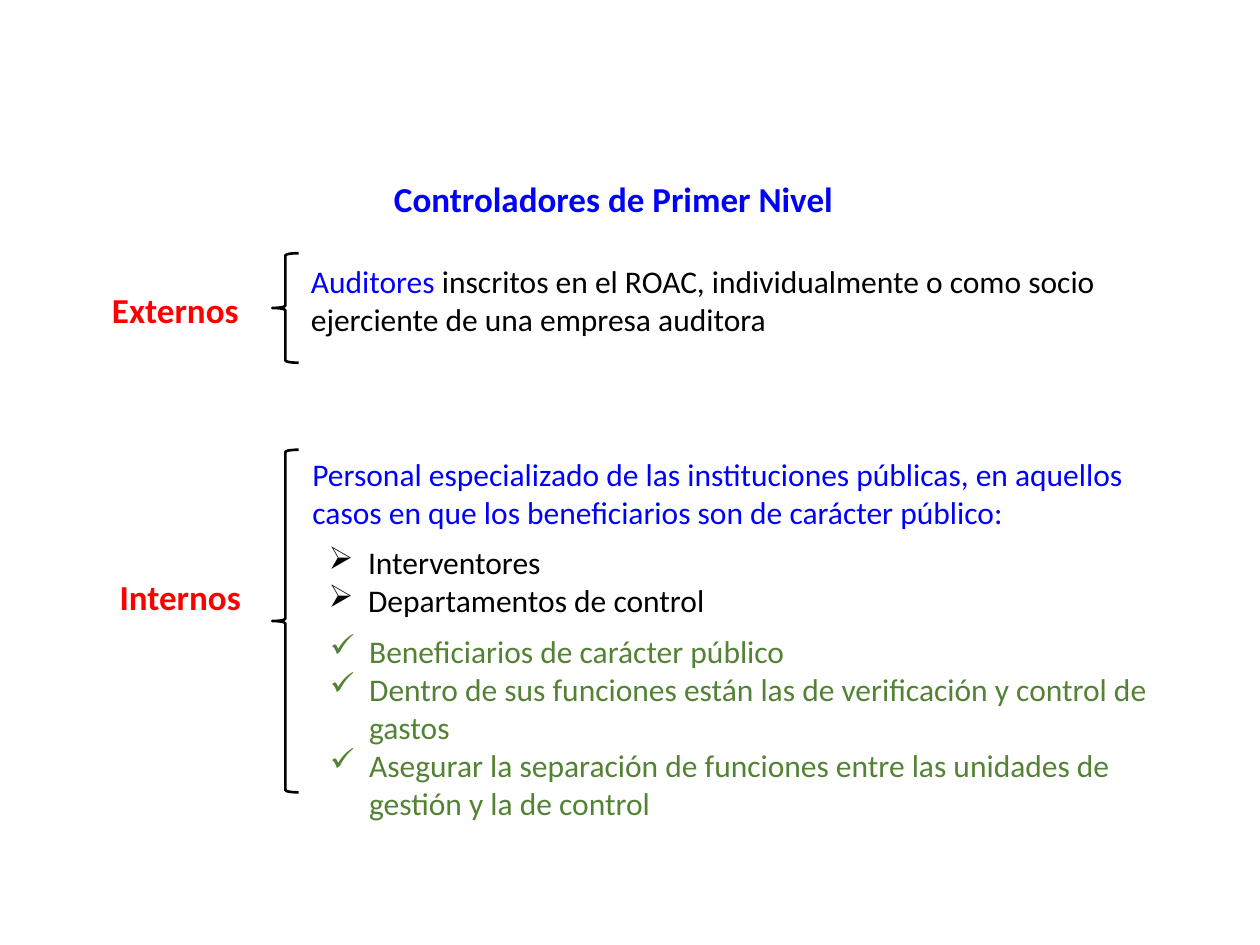
"""Build the slide on first-level controllers."""
from dataclasses import dataclass
from typing import Optional

from lxml import etree
from pptx import Presentation
from pptx.dml.color import RGBColor
from pptx.enum import shapes, text
from pptx.oxml.ns import qn
from pptx.util import Pt

HUES = {"blue": "0000FF", "black": "000000", "red": "FF0000", "green": "548235"}
BODY = {"name": "Calibri", "size": Pt(18), "bold": False}
HEAD = {"name": "Calibri", "size": Pt(20), "bold": True}
HANG = Pt(22.5)
Box = tuple[float, float, float, float]
Run = tuple[str, str]


@dataclass
class Block:
    """Text paragraphs, each a list of (words, hue) runs."""
    box: Box
    paras: list[list[Run]]
    style: dict
    mark: Optional[str] = None


def paint(hue: str) -> RGBColor:
    """Give the colour of a named hue."""
    return RGBColor.from_string(HUES[hue])


def place(shape, box: Box) -> None:
    """Set position and size in points."""
    for name, size in zip(("left", "top", "width", "height"), box):
        setattr(shape, name, Pt(size))


def fill(shape, block: Block, align=text.PP_ALIGN.LEFT) -> None:
    """Write a block's paragraphs into a shape."""
    frame = shape.text_frame
    look = {"word_wrap": True, "vertical_anchor": text.MSO_ANCHOR.TOP,
            "auto_size": text.MSO_AUTO_SIZE.SHAPE_TO_FIT_TEXT}
    for name, value in look.items():
        setattr(frame, name, value)
    for num, runs in enumerate(block.paras):
        para = frame.add_paragraph() if num else frame.paragraphs[0]
        para.alignment = align
        if block.mark:
            props = para._p.get_or_add_pPr()
            props.set("marL", str(HANG))
            props.set("indent", str(-HANG))
            etree.SubElement(props, qn("a:buChar")).set("char", block.mark)
        for words, hue in runs:
            run = para.add_run()
            run.text = words
            for name, value in block.style.items():
                setattr(run.font, name, value)
            run.font.color.rgb = paint(hue)


def write(slide, block: Block) -> None:
    """Add a text box for a block."""
    fill(slide.shapes.add_textbox(*map(Pt, block.box)), block)


def brace(slide, box: Box) -> None:
    """Add an open left brace."""
    shape = slide.shapes.add_shape(shapes.MSO_SHAPE.LEFT_BRACE, *map(Pt, box))
    shape.shadow.inherit = False
    shape.fill.background()
    shape.line.color.rgb = paint("black")
    shape.line.width = Pt(1.5)


def main() -> None:
    """Make and save the deck."""
    deck = Presentation()
    deck.slide_width, deck.slide_height = Pt(720), Pt(540)
    slide = deck.slides.add_slide(deck.slide_layouts[5])

    title = Block((180.7, 97.9, 339.8, 31.5),
                  [[("Controladores de Primer Nivel", "blue")]], HEAD)
    place(slide.shapes.title, title.box)
    fill(slide.shapes.title, title, text.PP_ALIGN.CENTER)

    blocks = [
        Block((170.6, 146.2, 506.9, 51), [[
            ("Auditores", "blue"),
            (" inscritos en el ROAC, individualmente o como socio "
             "ejerciente de una empresa auditora", "black")]], BODY),
        Block((171.4, 256.3, 478.8, 51), [[
            ("Personal especializado de las instituciones públicas, en aquellos "
             "casos en que los beneficiarios son de carácter público:", "blue")]], BODY),
        Block((180.7, 306.7, 390.2, 51), [
            [("Interventores", "black")],
            [("Departamentos de control", "black")]], BODY, "➢"),
        Block((181.4, 357.8, 496.8, 116.6), [
            [("Beneficiarios de carácter público", "green")],
            [("Dentro de sus funciones están las de verificación y control de gastos",
              "green")],
            [("Asegurar la separación de funciones entre las unidades de gestión "
              "y la de control", "green")]], BODY, "✓"),
        Block((56.9, 161.3, 106.6, 31.5), [[("Externos", "red")]], HEAD),
        Block((61.2, 325.4, 106.6, 31.5), [[("Internos", "red")]], HEAD),
    ]
    for block in blocks:
        write(slide, block)
    for top, tall in ((144.7, 62.6), (257, 195.8)):
        brace(slide, (155.5, top, 15.1, tall))
    deck.save("out.pptx")


if __name__ == "__main__":
    main()
